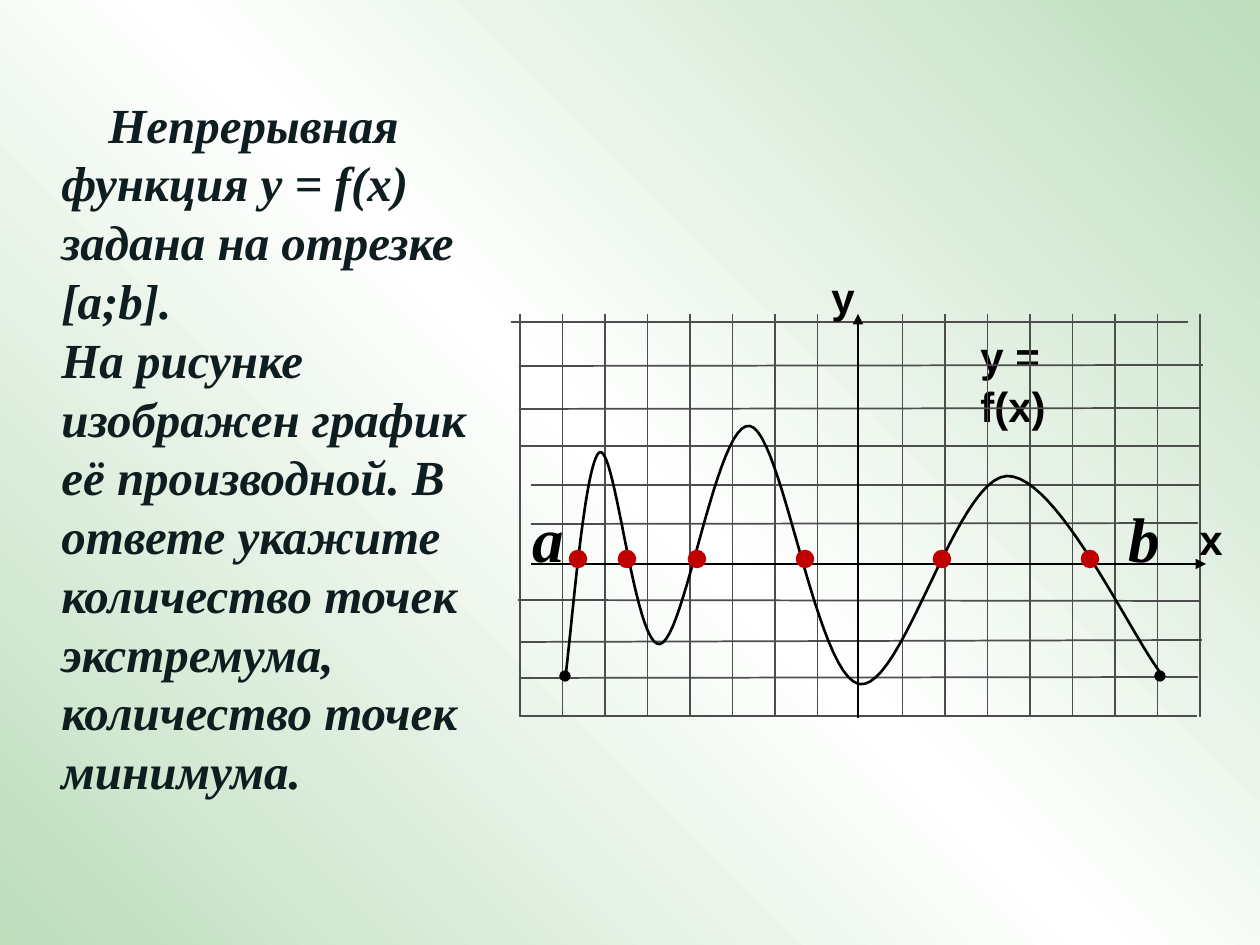
from pptx import Presentation
from pptx import util as u
from pptx.dml.color import RGBColor
from pptx.enum import shapes, text
from pptx.oxml import parse_xml
from pptx.oxml.ns import nsdecls, qn
from lxml import etree

SCALE = 914400 / 126  # EMU in one px
COLORS = {"ink": "000000", "body": "0E1E20", "grid": "4D4D4D",
          "root": "C00000", "edge": "BDDDBD", "mid": "FFFFFF"}
SERIF, SANS = "Times New Roman", "Arial"

# Grid rows: left, right, y at left, y at right
ROWS = [(511, 1188, 322, 322), (519, 1203, 366, 365), (519, 1200, 409, 408),
        (521, 1200, 446, 446), (531, 1200, 485, 485), (531, 1198, 524, 523),
        (518, 1200, 600, 601), (521, 1202, 642, 640), (519, 1198, 678, 677),
        (520, 1197, 716, 716)]
LEFT, STEP, COLS, AXIS = 520, 42.5, 17, 8
ROOTS = [578, 627, 697, 805, 942, 1090]
START = (566, 672)
# Each curve piece: two control points and an end point
CURVE = [((571, 635), (585, 457), (600, 452)),
         ((616, 449), (635, 649), (660, 644)),
         ((685, 639), (717, 419), (750, 426)),
         ((782, 432), (816, 675), (859, 684)),
         ((902, 692), (956, 478), (1007, 476)),
         ((1057, 475), (1130, 634), (1162, 675))]


def px(n):
    return u.Emu(round(n * SCALE))


def rgb(name):
    return RGBColor.from_string(COLORS[name])


def paint(slide):
    """Diagonal gradient behind the slide."""
    stops = "".join(
        f'<a:gs pos="{pos}"><a:srgbClr val="{COLORS[name]}"/></a:gs>'
        for pos, name in ((0, "edge"), (50000, "mid"), (100000, "edge")))
    back = parse_xml(
        f'<p:bg {nsdecls("p", "a")}><p:bgPr><a:gradFill rotWithShape="1">'
        f'<a:gsLst>{stops}</a:gsLst><a:lin ang="18900000" scaled="1"/>'
        '</a:gradFill><a:effectLst/></p:bgPr></p:bg>')
    slide.element.find(qn("p:cSld")).insert(0, back)


def write(slide, words, box, size=24, font=SANS, color="ink", italic=False,
          wrap=False, indent=0, pitch=None):
    """Text box; the indent is for the first line of the first paragraph."""
    frame = slide.shapes.add_textbox(*map(px, box)).text_frame
    frame.word_wrap = wrap
    frame.auto_size = text.MSO_AUTO_SIZE.SHAPE_TO_FIT_TEXT
    frame.text = words
    for par in frame.paragraphs:
        if pitch:
            par.line_spacing = u.Pt(pitch)
        run = par.runs[0].font
        run.size, run.name = u.Pt(size), font
        run.bold, run.italic = True, italic
        run.color.rgb = rgb(color)
    if indent:
        frame.paragraphs[0]._p.get_or_add_pPr().set("indent", str(px(indent)))


def rule(slide, start, end, color="grid", width=1, arrow=False):
    line = slide.shapes.add_connector(
        shapes.MSO_CONNECTOR.STRAIGHT, *map(px, start + end))
    line.line.color.rgb = rgb(color)
    line.line.width = u.Pt(width)
    if arrow:
        etree.SubElement(line.line._get_or_add_ln(),
                         qn("a:tailEnd")).set("type", "triangle")
    etree.SubElement(line._element.spPr, qn("a:effectLst"))


def dot(slide, x, y, size, color, width):
    mark = slide.shapes.add_shape(
        shapes.MSO_SHAPE.OVAL, px(x - size / 2), px(y - size / 2),
        px(size), px(size))
    mark.shadow.inherit = False
    mark.fill.solid()
    mark.fill.fore_color.rgb = rgb(color)
    mark.line.color.rgb = rgb(color)
    mark.line.width = u.Pt(width)


def bend(a, b, c, d, count=24):
    """Points along one cubic piece, without its start."""
    for i in range(1, count + 1):
        t = i / count
        s = 1 - t
        yield tuple(px(s**3 * p + 3 * s * s * t * q + 3 * s * t * t * r + t**3 * e)
                    for p, q, r, e in zip(a, b, c, d))


def plot(slide):
    points, last = [], START
    for one, two, end in CURVE:
        points += bend(last, one, two, end)
        last = end
    path = slide.shapes.build_freeform(*map(px, START))
    path.add_line_segments(points, close=False)
    curve = path.convert_to_shape()
    curve.shadow.inherit = False
    curve.fill.background()
    curve.line.color.rgb = rgb("ink")
    curve.line.width = u.Pt(1.5)


def grid(slide):
    for left, right, y1, y2 in ROWS:
        rule(slide, (left, y1), (right, y2))
    for i in range(COLS):
        if i != AXIS:
            x = LEFT + i * STEP
            rule(slide, (x, 314), (x, 717))


def main():
    deck = Presentation()
    deck.slide_width, deck.slide_height = px(1260), px(945)
    slide = deck.slides.add_slide(deck.slide_layouts[6])
    paint(slide)

    # Task
    write(slide, "Непрерывная функция у = f(x) задана на отрезке [a;b].\n"
          "На рисунке изображен график её производной. В ответе укажите "
          "количество точек экстремума, количество точек минимума.",
          (49, 88, 457, 726), size=28, font=SERIF, color="body",
          italic=True, wrap=True, indent=47, pitch=33.6)
    write(slide, "y = f(x)", (968, 324, 161, 63))

    # Grid and axes
    grid(slide)
    rule(slide, (531, 564), (1206, 564), "ink", 1.5, arrow=True)
    rule(slide, (858, 718), (858, 314), "ink", 1.5, arrow=True)
    write(slide, "y", (819, 265, 49, 63))
    write(slide, "x", (1187, 507, 49, 63))

    # Curve, ends of the interval and roots
    plot(slide)
    for name, x in (("a", 520), ("b", 1116)):
        write(slide, name, (x, 493, 57, 88), size=36, font=SERIF, italic=True)
    for x in (565, 1160):
        dot(slide, x, 676, 10, "ink", 0.75)
    for x in ROOTS:
        dot(slide, x, 559, 15, "root", 2)

    deck.save("out.pptx")


if __name__ == "__main__":
    main()
